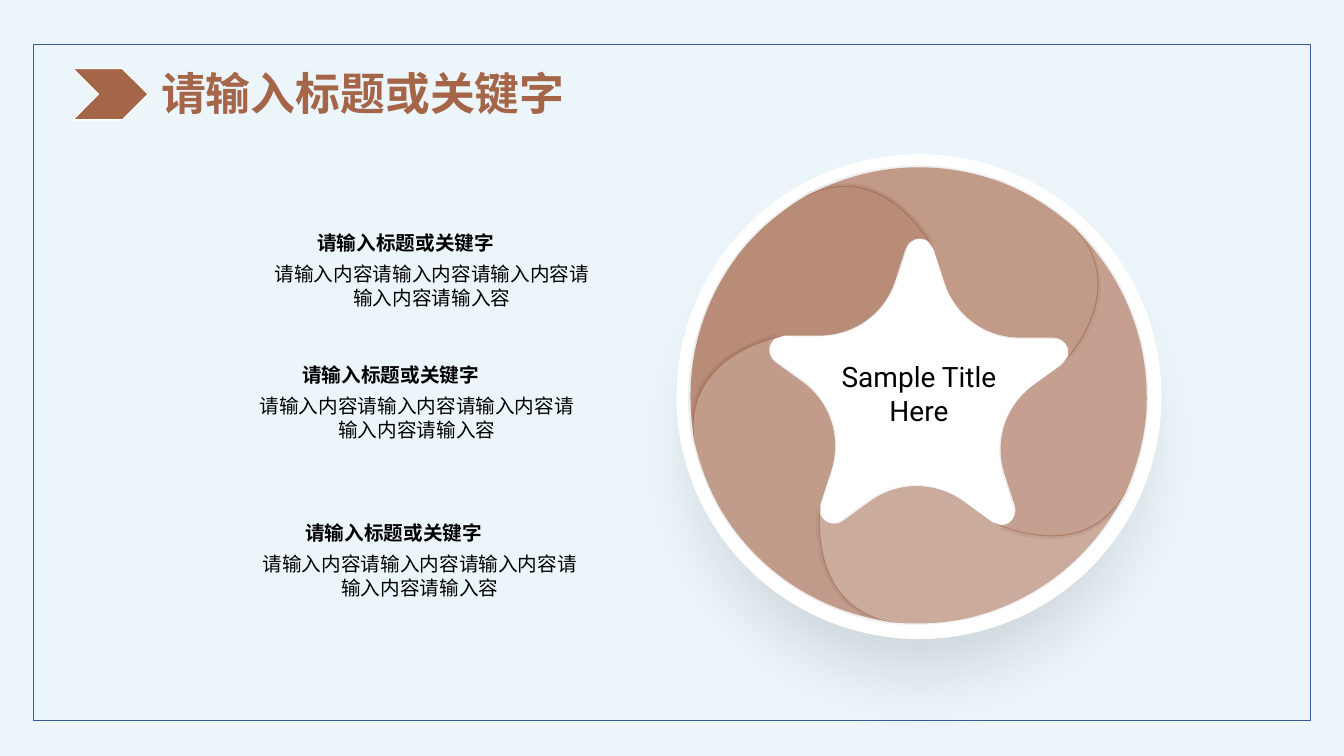
from dataclasses import dataclass
from math import cos, radians, sin

from lxml import etree
from pptx import Presentation
from pptx.dml.color import RGBColor
from pptx.enum.shapes import MSO_SHAPE
from pptx.enum.text import MSO_ANCHOR, MSO_AUTO_SIZE, PP_ALIGN
from pptx.oxml.ns import qn
from pptx.util import Inches, Pt

RECTANGLE, CHEVRON, OVAL = MSO_SHAPE.RECTANGLE, MSO_SHAPE.CHEVRON, MSO_SHAPE.OVAL
CENTER, JUSTIFY = PP_ALIGN.CENTER, PP_ALIGN.JUSTIFY
TOP, MIDDLE = MSO_ANCHOR.TOP, MSO_ANCHOR.MIDDLE
GROW, FIXED = MSO_AUTO_SIZE.SHAPE_TO_FIT_TEXT, MSO_AUTO_SIZE.NONE


@dataclass(frozen=True)
class Theme:
    """Colours, fonts and type sizes of the slide."""
    white: str = "FFFFFF"
    black: str = "000000"
    brown: str = "A56548"
    frame: str = "325491"
    tint: str = "46A8D0"
    chinese: str = "Noto Sans CJK SC"
    latin: str = "Roboto"
    title: int = 32
    centre: int = 20
    body: int = 14


THEME = Theme()
HEADING = "请输入标题或关键字"
BODY = "请输入内容请输入内容请输入内容请输入内容请输入容"
TOPIC_BOXES = [(2.55, 2.24, 3.47, 0.88), (2.4, 3.55, 3.47, 0.88), (2.43, 5.12, 3.47, 0.88)]
DISC_SHADOW = {"strength": 12, "blur": 50, "distance": 50, "scale": 92, "anchor": "t"}
PETAL_SHADOW = {"strength": 10, "blur": 0, "distance": 0, "scale": 102, "anchor": "ctr"}
PETAL_OPACITIES = [61, 71, 60, 50, 57]
PETAL_KNOTS = [
    (1.46, -0.34),
    (1.49, -0.38), (1.49, -0.42), (1.48, -0.47),
    (1.46, -0.53), (1.4, -0.57), (1.34, -0.57),
    (1.01, -0.57), (1.01, -0.57), (1.01, -0.57),
    (0.66, -0.57), (0.37, -0.79), (0.26, -1.11),
    (0.16, -1.42), (0.16, -1.42), (0.16, -1.42),
    (0.16, -1.42), (0.15, -1.46), (0.12, -1.49),
    (0.01, -1.68), (-0.43, -2.29), (-1.1, -1.98),
    (-0.56, -2.27), (0.08, -2.35), (0.71, -2.15),
    (1.03, -2.05), (1.31, -1.87), (1.55, -1.66),
    (2.06, -1.12), (1.61, -0.51), (1.46, -0.34),
]


def add_shadow(properties, strength, blur, distance, scale, anchor):
    """Add a black outer shadow that falls downwards."""
    outer = etree.SubElement(
        properties.find(qn("a:effectLst")), qn("a:outerShdw"), blurRad=str(Pt(blur)),
        dist=str(Pt(distance)), dir="5400000", sx=str(scale * 1000), sy=str(scale * 1000),
        algn=anchor, rotWithShape="0")
    shade = etree.SubElement(outer, qn("a:srgbClr"), val=THEME.black)
    etree.SubElement(shade, qn("a:alpha"), val=str(strength * 1000))


def paint(shape, fill, opacity=100, line=None, shadow=None):
    """Set fill, outline and an optional shadow."""
    shape.fill.solid()
    shape.fill.fore_color.rgb = RGBColor.from_string(fill)
    properties = shape.element.spPr
    colour = properties.find(qn("a:solidFill")).find(qn("a:srgbClr"))
    if opacity < 100:
        etree.SubElement(colour, qn("a:alpha"), val=str(opacity * 1000))
    if line:
        shape.line.color.rgb = RGBColor.from_string(line)
        shape.line.width = Pt(1)
    else:
        shape.line.fill.background()
    shape.shadow.inherit = False
    if shadow:
        add_shadow(properties, **shadow)


def add_preset(slide, kind, box, **style):
    """Add a painted preset shape in the given box."""
    paint(slide.shapes.add_shape(kind, *map(Inches, box)), **style)


def add_text(slide, box, lines, size, font=THEME.chinese, color=THEME.black, bold=False,
             align=CENTER, anchor=TOP, wrap=True, fit=GROW, inset=None):
    """Add a text box with one paragraph per line."""
    frame = slide.shapes.add_textbox(*map(Inches, box)).text_frame
    settings = {"word_wrap": wrap, "auto_size": fit, "vertical_anchor": anchor}
    if inset is not None:
        settings |= {f"margin_{side}": Inches(inset) for side in ("left", "top", "right", "bottom")}
    for name, value in settings.items():
        setattr(frame, name, value)
    for index, line in enumerate(lines):
        paragraph = frame.add_paragraph() if index else frame.paragraphs[0]
        paragraph.alignment = align
        run = paragraph.add_run()
        run.text = line
        for name, value in {"size": Pt(size), "name": font, "bold": bold}.items():
            setattr(run.font, name, value)
        run.font.color.rgb = RGBColor.from_string(color)
        etree.SubElement(run.font._element, qn("a:ea"), typeface=font)


def add_backdrop(slide, box):
    """Draw the framed panel and the pale blue tint over it."""
    left, top, width, height = box
    panel = (left + 0.33, top + 0.44, width - 0.66, height - 0.79)
    add_preset(slide, RECTANGLE, panel, fill=THEME.white, opacity=92, line=THEME.frame)
    add_preset(slide, RECTANGLE, box, fill=THEME.tint, opacity=10)


def add_title(slide, box):
    """Draw the chevron and the slide title beside it."""
    left, top, width, height = box
    add_preset(slide, CHEVRON, (left, top + 0.08, 0.75, 0.51), fill=THEME.brown, line=THEME.white)
    add_text(slide, (left + 0.78, top, width - 0.78, height), [HEADING], THEME.title,
             color=THEME.brown, bold=True, align=JUSTIFY)


def add_petal(slide, centre_x, centre_y, angle, opacity):
    """Draw one curved petal turned by an angle about the wheel centre."""
    c, s = cos(radians(angle)), sin(radians(angle))
    start, *knots = [(Inches(centre_x + x * c - y * s), Inches(centre_y + x * s + y * c))
                     for x, y in PETAL_KNOTS]
    builder = slide.shapes.build_freeform(*start)
    builder.add_line_segments(knots, close=True)
    petal = builder.convert_to_shape()
    outline = next(petal.element.iter(qn("a:path")))
    segments = outline.findall(qn("a:lnTo"))
    for first in range(0, len(segments), 3):
        curve = etree.Element(qn("a:cubicBezTo"))
        segments[first].addprevious(curve)
        for segment in segments[first:first + 3]:
            curve.append(segment[0])
            outline.remove(segment)
    paint(petal, THEME.brown, opacity, shadow=PETAL_SHADOW)


def add_wheel(slide, box):
    """Draw the white disc, its label and the ring of five petals."""
    left, top, width, height = box
    centre_x, centre_y = left + 2.4, top + 2.39
    add_preset(slide, OVAL, box, fill=THEME.white, shadow=DISC_SHADOW)
    add_text(slide, (left + 1.55, top + 2.14, 1.71, 0.46), ["Sample Title", "Here"],
             THEME.centre, font=THEME.latin, anchor=MIDDLE, fit=FIXED, inset=0)
    for index, opacity in enumerate(PETAL_OPACITIES):
        add_petal(slide, centre_x, centre_y, -index * 360 / len(PETAL_OPACITIES), opacity)


def add_topic(slide, box):
    """Write a bold heading with its centred description below."""
    left, top, width, height = box
    add_text(slide, (left + 0.49, top, 1.97, 0.34), [HEADING], THEME.body, bold=True, wrap=False)
    add_text(slide, (left, top + 0.31, width, height - 0.31), [BODY], THEME.body)


def main():
    """Build the slide and save it."""
    deck = Presentation()
    deck.slide_width, deck.slide_height = Inches(13.33), Inches(7.5)
    slide = deck.slides.add_slide(deck.slide_layouts[6])
    add_backdrop(slide, (0, 0, 13.33, 7.5))
    add_title(slide, (0.72, 0.6, 5.54, 0.64))
    add_wheel(slide, (6.71, 1.53, 4.81, 4.81))
    for box in TOPIC_BOXES:
        add_topic(slide, box)
    deck.save("out.pptx")


if __name__ == "__main__":
    main()
